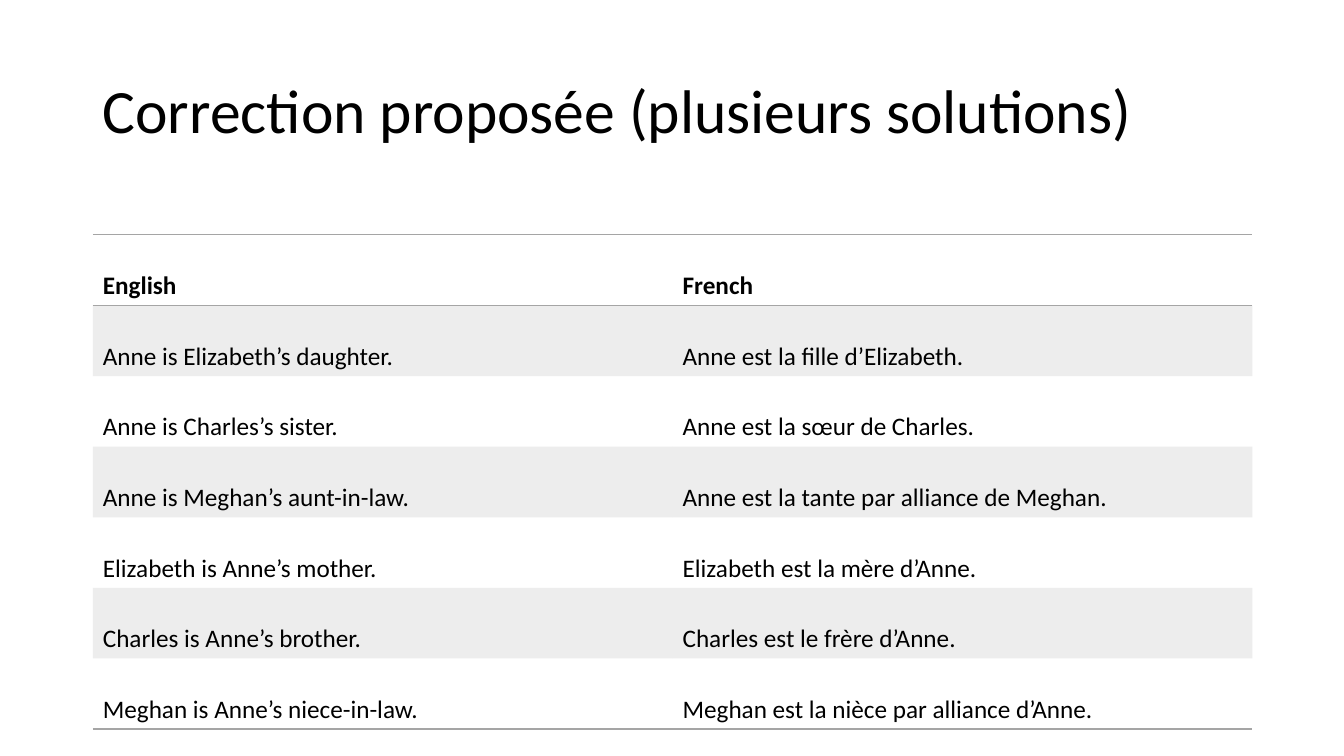
from lxml.etree import SubElement
from pptx import Presentation
from pptx.dml.color import RGBColor
from pptx.enum.text import MSO_ANCHOR
from pptx.oxml.ns import qn
from pptx.util import Inches, Pt

BLACK = RGBColor(0x00, 0x00, 0x00)
GRAY = RGBColor(0xA5, 0xA5, 0xA5)
FONT = "Calibri"
NO_STYLE = "{2D5ABB26-0587-4C30-8999-92F81FD0307C}"
LEFT, WIDTH = Inches(0.92), Inches(11.5)
SENTENCES = [
    ("English", "French"),
    ("Anne is Elizabeth’s daughter.", "Anne est la fille d’Elizabeth."),
    ("Anne is Charles’s sister.", "Anne est la sœur de Charles."),
    ("Anne is Meghan’s aunt-in-law.", "Anne est la tante par alliance de Meghan."),
    ("Elizabeth is Anne’s mother.", "Elizabeth est la mère d’Anne."),
    ("Charles is Anne’s brother.", "Charles est le frère d’Anne."),
    ("Meghan is Anne’s niece-in-law.", "Meghan est la nièce par alliance d’Anne."),
]


def write(tf, text, size, spacing, bold=False):
    """Put one formatted paragraph in a text frame."""
    tf.text = text
    p = tf.paragraphs[0]
    p.line_spacing = spacing
    font = p.runs[0].font
    font.name, font.size, font.bold = FONT, Pt(size), bold
    font.color.rgb = BLACK


def add_title(s, text):
    """Add the slide title."""
    tf = s.shapes.add_textbox(LEFT, Inches(0.4), WIDTH, Inches(1.45)).text_frame
    tf.word_wrap = True
    tf.vertical_anchor = MSO_ANCHOR.MIDDLE
    write(tf, text, 44, 0.9)


def add_border(cell, side):
    """Draw a gray line on one side of a cell."""
    ln = SubElement(cell._tc.get_or_add_tcPr(), qn(f"a:{side}"), w=str(Pt(1)))
    fill = SubElement(ln, qn("a:solidFill"))
    SubElement(fill, qn("a:srgbClr"), val=str(GRAY))


def shade(cell):
    """Fill a cell with gray at 20 % opacity."""
    cell.fill.solid()
    cell.fill.fore_color.rgb = GRAY
    color = cell._tc.tcPr.find(f"{qn('a:solidFill')}/{qn('a:srgbClr')}")
    SubElement(color, qn("a:alpha"), val="20000")


def add_sentence_table(s, rows):
    """Add the banded table of sentence pairs."""
    height = Inches(4.31)
    frame = s.shapes.add_table(len(rows), 2, LEFT, Inches(2.33), WIDTH, height)
    table = frame.table
    table._tbl.tblPr.find(qn("a:tableStyleId")).text = NO_STYLE
    for i, texts in enumerate(rows):
        table.rows[i].height = Inches(0.41)
        for j, text in enumerate(texts):
            cell = table.cell(i, j)
            cell.vertical_anchor = MSO_ANCHOR.MIDDLE
            write(cell.text_frame, text, 18, 2.0, bold=i == 0)
            if i == 0:
                add_border(cell, "lnT")
            if i in (0, len(rows) - 1):
                add_border(cell, "lnB")
            if i % 2:
                shade(cell)
            else:
                cell.fill.background()
    frame.height = height


def main():
    """Build the slide and save it."""
    prs = Presentation()
    prs.slide_width, prs.slide_height = Inches(13.33), Inches(7.5)
    s = prs.slides.add_slide(prs.slide_layouts[6])
    add_title(s, "Correction proposée (plusieurs solutions)")
    add_sentence_table(s, SENTENCES)
    prs.save("out.pptx")


if __name__ == "__main__":
    main()
